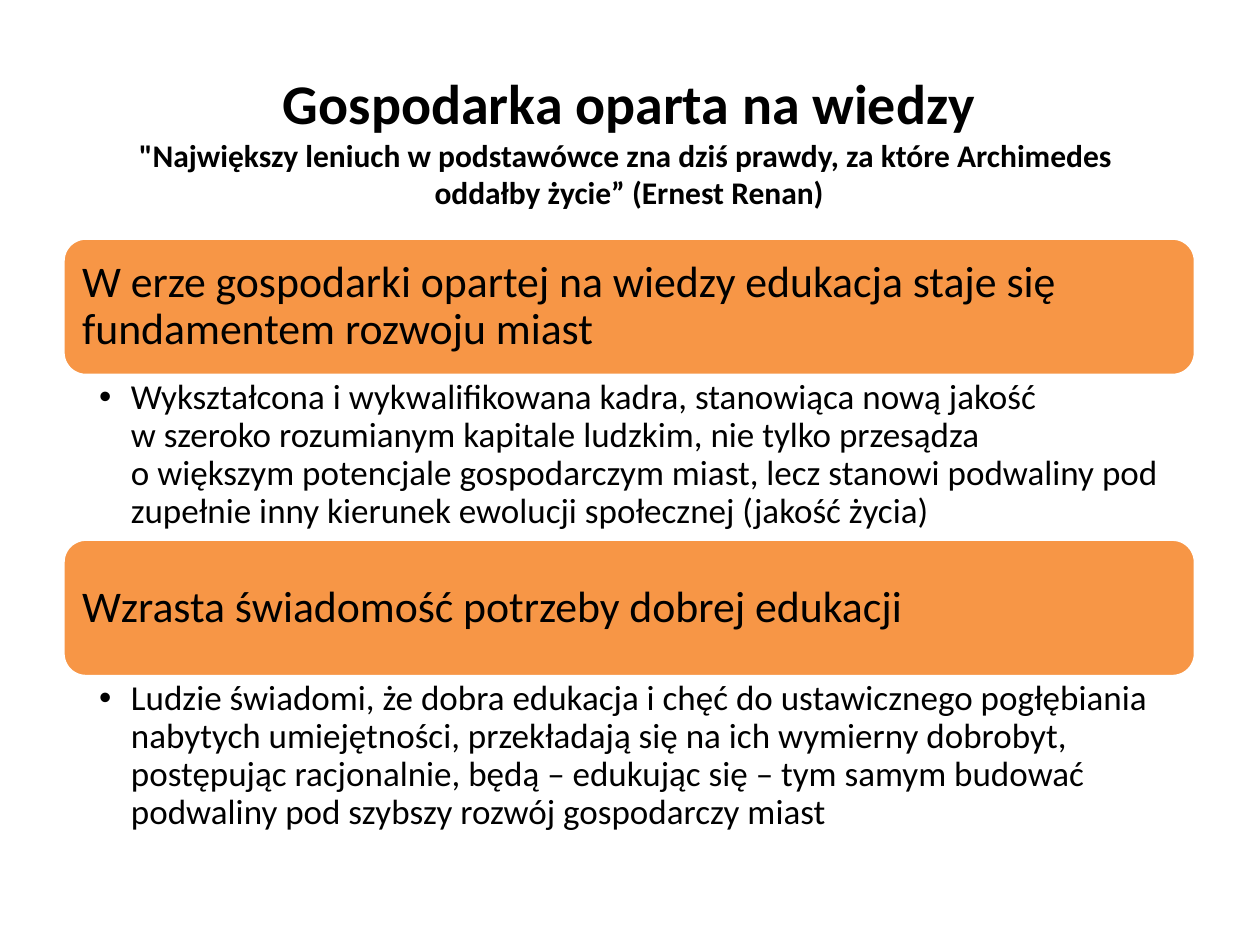
from copy import deepcopy
from dataclasses import dataclass

from lxml.etree import SubElement
from pptx import Presentation
from pptx.dml.color import RGBColor
from pptx.enum.shapes import MSO_SHAPE
from pptx.enum.text import MSO_ANCHOR, MSO_AUTO_SIZE, PP_ALIGN
from pptx.oxml.ns import qn
from pptx.util import Cm, Pt


@dataclass(frozen=True)
class Theme:
    font: str = "Calibri"
    text: RGBColor = RGBColor(0x00, 0x00, 0x00)
    accent: RGBColor = RGBColor(0xF7, 0x96, 0x46)
    outline: RGBColor = RGBColor(0xFF, 0xFF, 0xFF)
    title_size: int = 32
    quote_size: int = 18
    heading_size: int = 25
    body_size: int = 20
    line_spacing: float = 0.9


class SlideBuilder:
    def __init__(self, slide, theme):
        self.slide = slide
        self.theme = theme

    def add_lines(self, paragraph, lines, size, bold=False):
        """Add one run per line, with line breaks of the same size between."""
        for index, line in enumerate(lines):
            if index:
                paragraph.add_line_break()
                line_break = paragraph._p[-1]
            run = paragraph.add_run()
            run.text = line
            run.font.name = self.theme.font
            run.font.size = Pt(size)
            run.font.bold = bold
            run.font.color.rgb = self.theme.text
            if index:
                line_break.append(deepcopy(run._r.rPr))

    def frame(self, shape, anchor, left, top, right, bottom):
        frame = shape.text_frame
        frame.word_wrap = True
        frame.auto_size = MSO_AUTO_SIZE.NONE
        frame.vertical_anchor = anchor
        frame.margin_left, frame.margin_right = Cm(left), Cm(right)
        frame.margin_top, frame.margin_bottom = Cm(top), Cm(bottom)
        return frame.paragraphs[0]

    def title(self, title, quote, left, top, width, height):
        shape = self.slide.shapes.title
        shape.left, shape.top = Cm(left), Cm(top)
        shape.width, shape.height = Cm(width), Cm(height)
        paragraph = self.frame(shape, MSO_ANCHOR.MIDDLE, 0.25, 0.13, 0.25, 0.13)
        paragraph.alignment = PP_ALIGN.CENTER
        self.add_lines(paragraph, [title], self.theme.title_size, bold=True)
        paragraph.add_line_break()
        paragraph._p[-1].append(deepcopy(paragraph.runs[0]._r.rPr))
        self.add_lines(paragraph, quote, self.theme.quote_size, bold=True)

    def heading(self, text, left, top, width, height):
        shape = self.slide.shapes.add_shape(
            MSO_SHAPE.ROUNDED_RECTANGLE, Cm(left), Cm(top), Cm(width), Cm(height))
        shape.shadow.inherit = False
        shape.fill.solid()
        shape.fill.fore_color.rgb = self.theme.accent
        shape.line.color.rgb = self.theme.outline
        shape.line.width = Pt(2)
        paragraph = self.frame(shape, MSO_ANCHOR.MIDDLE, 0.25, 0.25, 0.25, 0.25)
        paragraph.alignment = PP_ALIGN.LEFT
        paragraph.line_spacing = self.theme.line_spacing
        self.add_lines(paragraph, [text], self.theme.heading_size)

    def bullet(self, lines, left, top, width, height):
        shape = self.slide.shapes.add_textbox(
            Cm(left), Cm(top), Cm(width), Cm(height))
        paragraph = self.frame(shape, MSO_ANCHOR.TOP, 0.73, 0.08, 0.48, 0.08)
        paragraph.line_spacing = self.theme.line_spacing
        properties = paragraph._p.get_or_add_pPr()
        properties.set("marL", str(Cm(0.64)))
        properties.set("indent", str(Cm(-0.64)))
        SubElement(properties, qn("a:buFont"), typeface="Arial")
        SubElement(properties, qn("a:buChar"), char="•")
        self.add_lines(paragraph, lines, self.theme.body_size)


SECTIONS = [
    ("W erze gospodarki opartej na wiedzy edukacja staje się "
     "fundamentem rozwoju miast",
     ["Wykształcona i wykwalifikowana kadra, stanowiąca nową jakość ",
      "w szeroko rozumianym kapitale ludzkim, nie tylko przesądza ",
      "o większym potencjale gospodarczym miast, lecz stanowi podwaliny pod "
      "zupełnie inny kierunek ewolucji społecznej (jakość życia)"]),
    ("Wzrasta świadomość potrzeby dobrej edukacji",
     ["Ludzie świadomi, że dobra edukacja i chęć do ustawicznego pogłębiania "
      "nabytych umiejętności, przekładają się na ich wymierny dobrobyt, "
      "postępując racjonalnie, będą – edukując się – tym samym budować "
      "podwaliny pod szybszy rozwój gospodarczy miast"]),
]


def main():
    presentation = Presentation()
    presentation.slide_width, presentation.slide_height = Cm(25.4), Cm(19.05)
    slide = presentation.slides.add_slide(presentation.slide_layouts[5])
    builder = SlideBuilder(slide, Theme())

    # Title with quotation
    builder.title(
        "Gospodarka oparta na wiedzy",
        ['"Największy leniuch w podstawówce zna dziś prawdy, za które Archimedes ',
         "oddałby życie” (Ernest Renan)"],
        0.38, 1.12, 24.61, 3.4)

    # Stacked sections: a heading bar with its explanation below
    left, top, width = 1.27, 4.8, 22.83
    heading_height, body_height = 2.77, 3.3
    for heading, lines in SECTIONS:
        builder.heading(heading, left, top, width, heading_height)
        top += heading_height
        builder.bullet(lines, left, top, width, body_height)
        top += body_height

    presentation.save("out.pptx")


if __name__ == "__main__":
    main()
